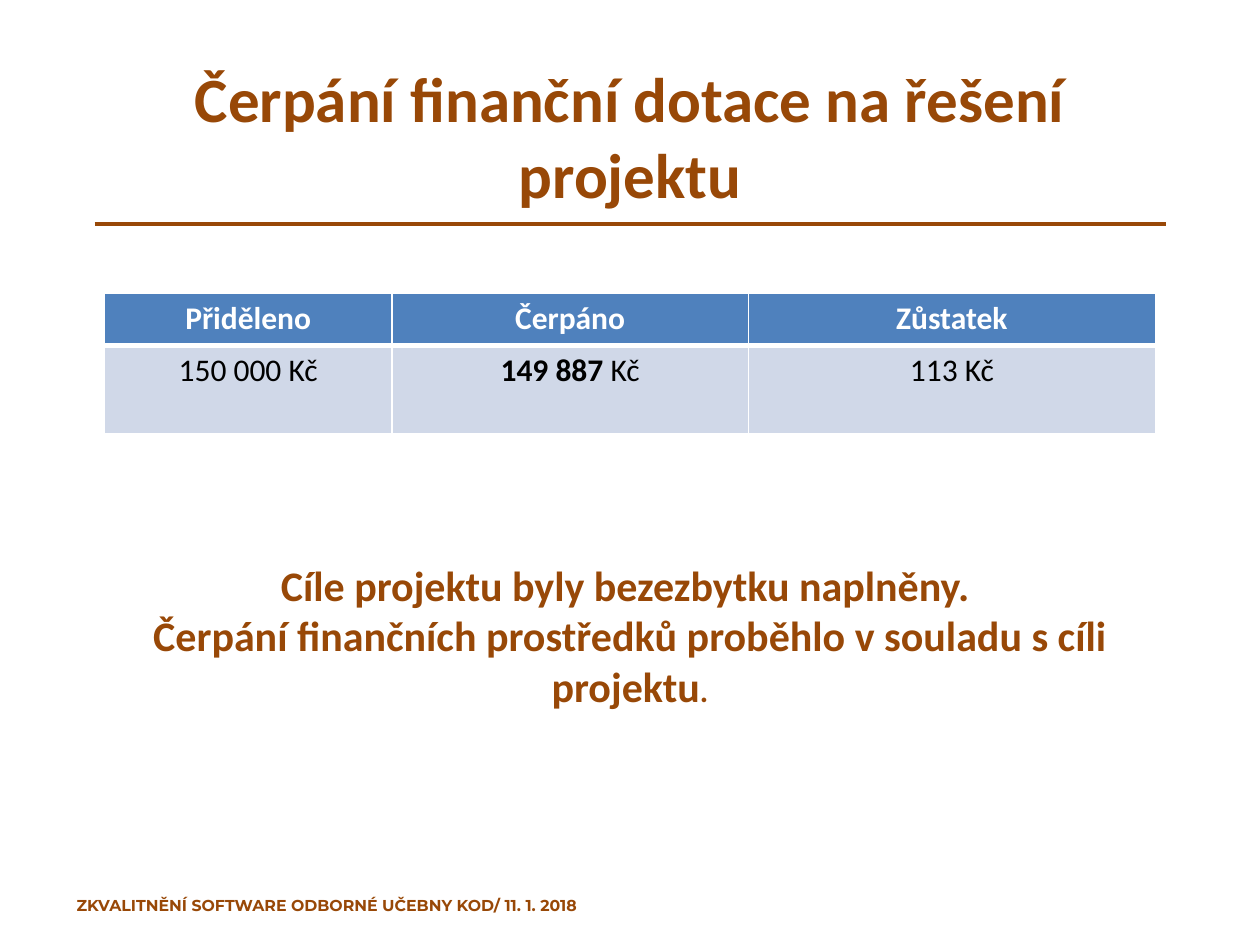
from lxml.etree import SubElement
from pptx import Presentation
from pptx.dml.color import RGBColor
from pptx.enum.shapes import MSO_CONNECTOR
from pptx.enum.text import MSO_ANCHOR, MSO_AUTO_SIZE, PP_ALIGN
from pptx.oxml.ns import qn
from pptx.util import Inches, Pt

BROWN = "984807"
WHITE = "FFFFFF"


def style(paragraph, size, color, bold=True, align=PP_ALIGN.CENTER, name="Calibri"):
    paragraph.alignment = align
    font = paragraph.font
    font.name, font.size, font.bold = name, Pt(size), bold
    font.color.rgb = RGBColor.from_string(color)


def add_border(cell, side, points):
    """Add a white border; side is L, R, T or B, called in that order."""
    line = SubElement(cell._tc.get_or_add_tcPr(), qn(f"a:ln{side}"), w=str(Pt(points)))
    fill = SubElement(line, qn("a:solidFill"))
    SubElement(fill, qn("a:srgbClr"), val=WHITE)


presentation = Presentation()
presentation.slide_width, presentation.slide_height = Inches(10), Inches(7.5)
slide = presentation.slides.add_slide(presentation.slide_layouts[5])

# Title and rule
title = slide.shapes.title
title.left, title.top = Inches(0.59), Inches(0.68)
title.width, title.height = Inches(8.82), Inches(0.79)
title.text_frame.text = "Čerpání finanční dotace na řešení projektu"
title.text_frame.auto_size = MSO_AUTO_SIZE.NONE
title.text_frame.vertical_anchor = MSO_ANCHOR.MIDDLE
style(title.text_frame.paragraphs[0], 36, BROWN)

rule = slide.shapes.add_connector(
    MSO_CONNECTOR.STRAIGHT, Inches(0.75), Inches(1.78), Inches(9.25), Inches(1.78))
rule.line.color.rgb = RGBColor.from_string(BROWN)
rule.line.width = Pt(2.5)
SubElement(rule._element.spPr, qn("a:effectLst"))

# Budget table: each cell is a list of (text, bold) runs
rows = [
    [[("Přiděleno", True)], [("Čerpáno", True)], [("Zůstatek", True)]],
    [[("150 000 Kč", False)], [("149 887 ", True), ("Kč", False)], [("113 Kč", False)]],
]
row_styles = [  # height, fill, text colour, borders
    (0.41, "4F81BD", WHITE, {"L": 1, "R": 1, "T": 1, "B": 3}),
    (0.7, "D0D8E8", "000000", {"L": 1, "R": 1, "T": 3, "B": 1}),
]
table = slide.shapes.add_table(
    2, 3, Inches(0.83), Inches(2.33), Inches(8.34), Inches(1.11)).table
for column, width in zip(table.columns, (2.28, 2.83, 3.23)):
    column.width = Inches(width)
for row, contents, (height, fill, color, borders) in zip(table.rows, rows, row_styles):
    row.height = Inches(height)
    for cell, runs in zip(row.cells, contents):
        for side, points in borders.items():
            add_border(cell, side, points)
        cell.fill.solid()
        cell.fill.fore_color.rgb = RGBColor.from_string(fill)
        paragraph = cell.text_frame.paragraphs[0]
        style(paragraph, 18, color, bold=None)
        for text, bold in runs:
            run = paragraph.add_run()
            run.text, run.font.bold = text, bold

# Conclusion
conclusion = slide.shapes.add_textbox(
    Inches(0.75), Inches(4.39), Inches(8.5), Inches(1.31)).text_frame
conclusion.word_wrap = True
conclusion.text = (
    "Cíle projektu byly bezezbytku naplněny. \n"
    "Čerpání finančních prostředků proběhlo v souladu s cíli projektu")
for paragraph in conclusion.paragraphs:
    style(paragraph, 24, BROWN)
full_stop = conclusion.paragraphs[-1].add_run()
full_stop.text = "."
full_stop.font.size = Pt(18)

# Footer
footer = slide.shapes.add_textbox(
    Inches(0.51), Inches(7.06), Inches(8.43), Inches(0.25)).text_frame
footer.word_wrap = True
footer.text = "ZKVALITNĚNÍ SOFTWARE ODBORNÉ UČEBNY KOD/ 11. 1. 2018"
style(footer.paragraphs[0], 9, BROWN, align=PP_ALIGN.LEFT, name="Montserrat")

presentation.save("out.pptx")
